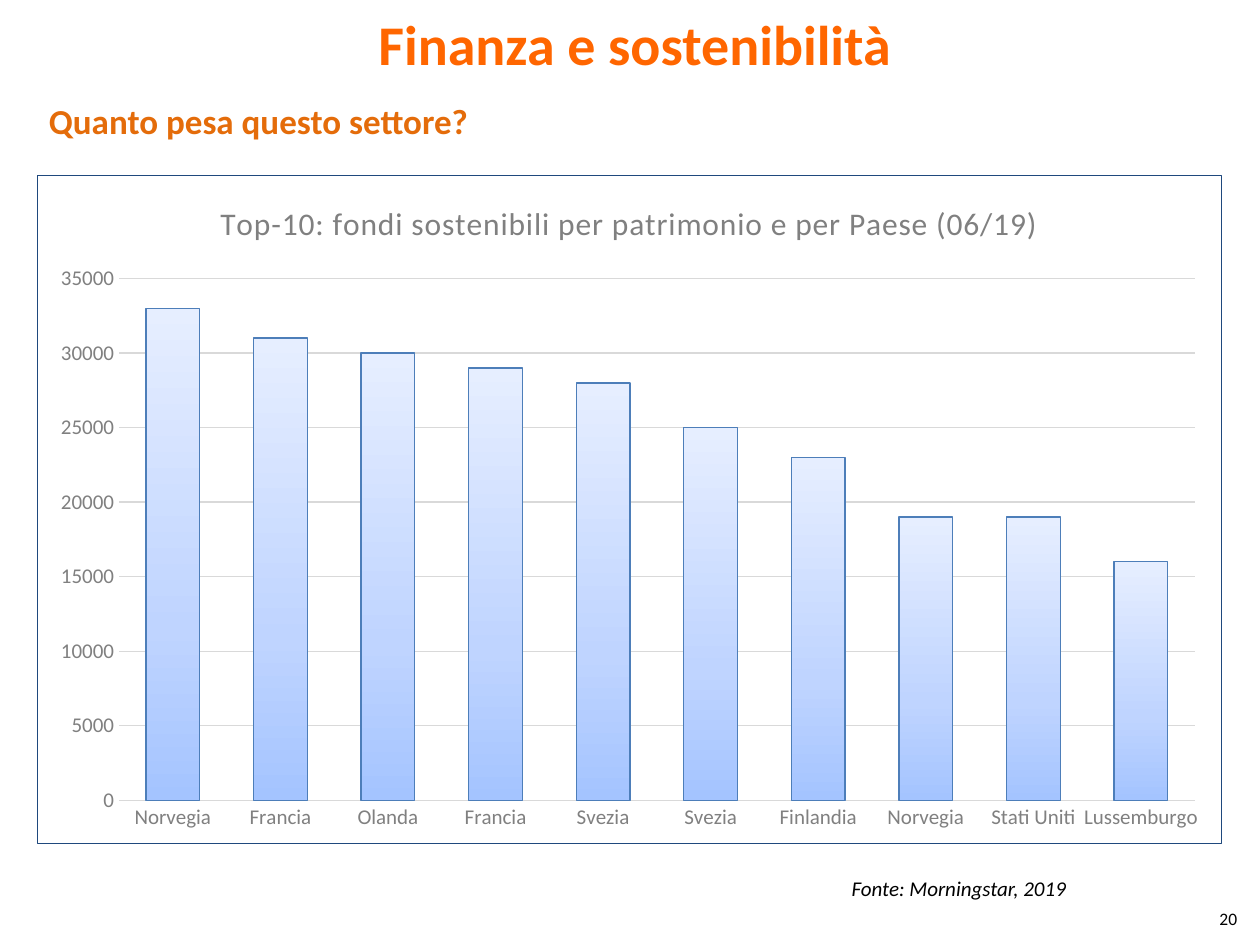
from lxml import etree
from pptx import Presentation
from pptx.chart.data import CategoryChartData
from pptx.dml.color import RGBColor
from pptx.enum.chart import XL_CHART_TYPE as ChartType, XL_TICK_MARK as Tick
from pptx.enum.text import MSO_ANCHOR as Anchor, PP_ALIGN as Align
from pptx.oxml import parse_xml
from pptx.oxml.ns import nsdecls, qn
from pptx.util import Inches, Pt

# Content
TITLE = "Finanza e sostenibilità"
QUESTION = "Quanto pesa questo settore?"
SOURCE = "Fonte: Morningstar, 2019"
PAGE_NUMBER = "20"
CHART_TITLE = "Top-10: fondi sostenibili per patrimonio e per Paese (06/19)"
FUNDS = [
    ("Norvegia", 33000), ("Francia", 31000), ("Olanda", 30000),
    ("Francia", 29000), ("Svezia", 28000), ("Svezia", 25000),
    ("Finlandia", 23000), ("Norvegia", 19000), ("Stati Uniti", 19000),
    ("Lussemburgo", 16000),
]
COLORS = {
    "title": "FF6600", "question": "E46C0A", "text": "000000",
    "label": "808080", "grid": "D9D9D9", "frame": "1F497D", "bar_line": "4D7EB9",
}
BAR_GRADIENT = [(0, "A4C4FF"), (35, "BFD4FF"), (100, "E6EEFF")]
FONT = "Calibri"


def style_font(font, size, color, bold=False, italic=False):
    font.name, font.size, font.bold, font.italic = FONT, Pt(size), bold, italic
    font.color.rgb = RGBColor.from_string(COLORS[color])


def style_line(line, color):
    line.color.rgb = RGBColor.from_string(COLORS[color])
    line.width = Pt(0.75)


def add_label(slide, text, box, size, color, wrap=True, **style):
    frame = slide.shapes.add_textbox(*map(Inches, box)).text_frame
    frame.word_wrap = wrap
    frame.text = text
    style_font(frame.paragraphs[0].font, size, color, **style)


def fill_gradient(fmt):
    """Fill bars from bottom to top with the gradient stops."""
    stops = "".join(
        f'<a:gs pos="{pos * 1000}"><a:srgbClr val="{color}"/></a:gs>'
        for pos, color in BAR_GRADIENT)
    fmt.fill.background()
    no_fill = fmt._element.spPr.find(qn("a:noFill")) if hasattr(fmt._element, "spPr") else None
    gradient = parse_xml(
        f'<a:gradFill {nsdecls("a")} rotWithShape="1"><a:gsLst>{stops}</a:gsLst>'
        '<a:lin ang="16200000" scaled="0"/></a:gradFill>')
    no_fill.getparent().replace(no_fill, gradient)


def add_frame(chart):
    """Outline the whole chart area."""
    area = parse_xml(
        f'<c:spPr {nsdecls("c", "a")}><a:noFill/><a:ln w="9525"><a:solidFill>'
        f'<a:srgbClr val="{COLORS["frame"]}"/></a:solidFill></a:ln></c:spPr>')
    chart._chartSpace.find(qn("c:chart")).addnext(area)


def add_funds_chart(slide):
    data = CategoryChartData()
    data.categories = [country for country, _ in FUNDS]
    data.add_series("Series 1", [assets for _, assets in FUNDS])
    chart = slide.shapes.add_chart(
        ChartType.COLUMN_CLUSTERED, *map(Inches, (0.29, 1.39, 9.41, 5.31)), data).chart
    style_font(chart.font, 10, "text")
    chart.has_legend = False
    add_frame(chart)

    # Chart title
    heading = chart.chart_title.text_frame
    heading.text = CHART_TITLE
    heading_font = heading.paragraphs[0].font
    style_font(heading_font, 18, "label")
    heading_font._element.set("spc", "50")
    chart.chart_title.include_in_layout = False

    # Axes
    countries, assets = chart.category_axis, chart.value_axis
    for axis in (countries, assets):
        axis.major_tick_mark = axis.minor_tick_mark = Tick.NONE
        style_font(axis.tick_labels.font, 12, "label")
    style_line(countries.format.line, "grid")
    assets.format.line.fill.background()
    style_line(assets.major_gridlines.format.line, "grid")
    assets.minimum_scale, assets.maximum_scale, assets.major_unit = 0, 35000, 5000

    # Bars
    plot = chart.plots[0]
    plot.gap_width, plot.overlap, plot.vary_by_categories = 100, -24, False
    bars = plot.series[0]
    bars.format.fill.background()
    style_line(bars.format.line, "bar_line")
    no_fill = bars._element.find(qn("c:spPr")).find(qn("a:noFill"))
    stops = "".join(
        f'<a:gs pos="{pos * 1000}"><a:srgbClr val="{color}"/></a:gs>'
        for pos, color in BAR_GRADIENT)
    no_fill.getparent().replace(no_fill, parse_xml(
        f'<a:gradFill {nsdecls("a")} rotWithShape="1"><a:gsLst>{stops}</a:gsLst>'
        '<a:lin ang="16200000" scaled="0"/></a:gradFill>'))


def main():
    deck = Presentation()
    deck.slide_width, deck.slide_height = Inches(10), Inches(7.5)
    slide = deck.slides.add_slide(deck.slide_layouts[5])

    # Title
    title = slide.shapes.title
    title.left, title.top, title.width, title.height = map(Inches, (0.08, 0.04, 9.92, 0.61))
    title.text_frame.text = TITLE
    title.text_frame.vertical_anchor = Anchor.MIDDLE
    title.text_frame.paragraphs[0].alignment = Align.CENTER
    style_font(title.text_frame.paragraphs[0].font, 32, "title", bold=True)

    # Question, chart, source and page number
    add_label(slide, QUESTION, (0.29, 0.74, 7.27, 0.44), 20, "question", bold=True)
    add_funds_chart(slide)
    add_label(slide, SOURCE, (6.66, 6.9, 1.95, 0.31), 12, "text", italic=True)
    add_label(slide, PAGE_NUMBER, (9.58, 7.16, 0.39, 0.27), 10, "text", wrap=False)
    deck.save("out.pptx")


if __name__ == "__main__":
    main()
